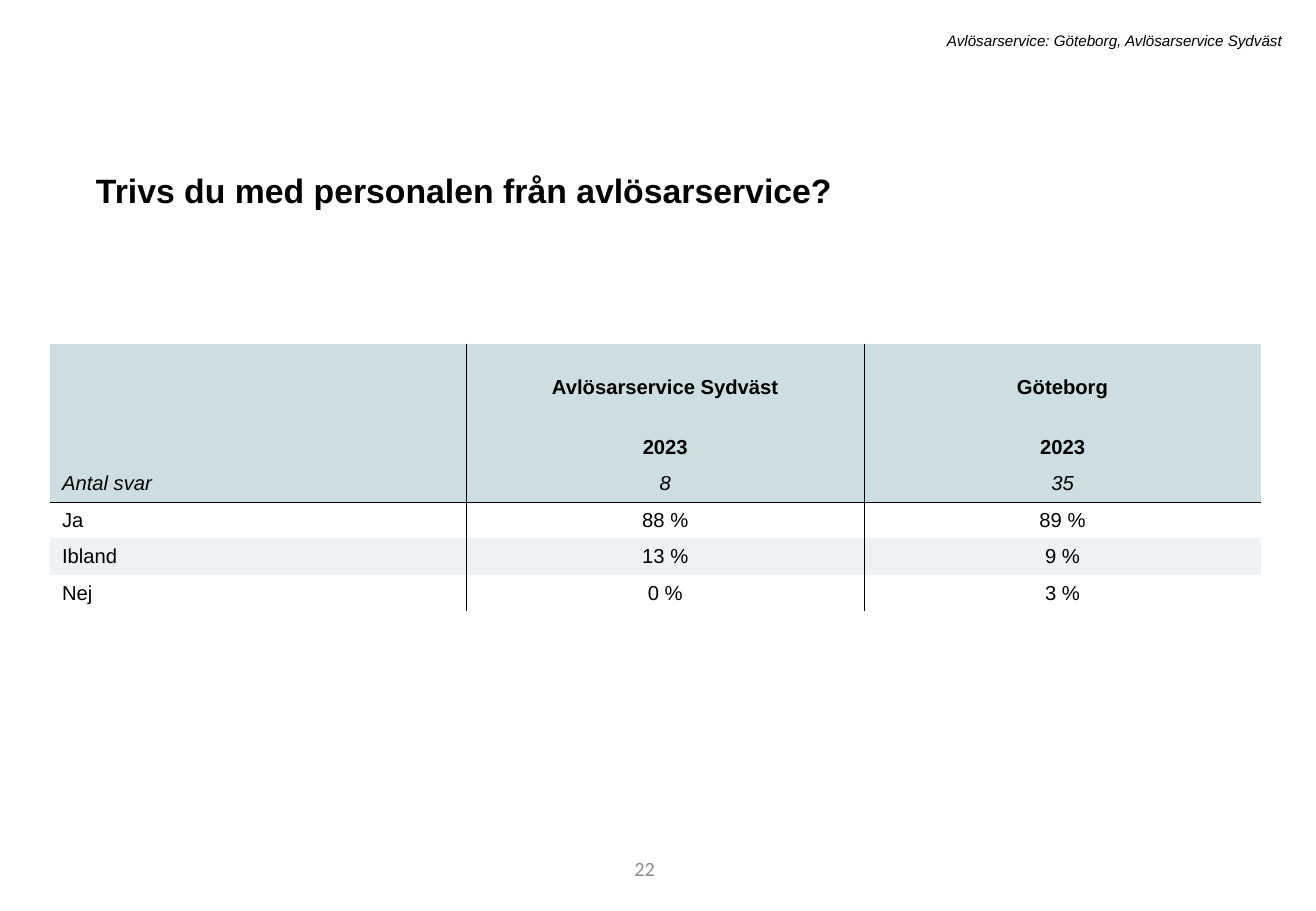
import pptx
import pptx.util
import pptx.dml.color
import pptx.enum.text
import pptx.oxml
import pptx.oxml.ns

Pt = pptx.util.Pt
Align = pptx.enum.text.PP_ALIGN
Anchor = pptx.enum.text.MSO_ANCHOR
AutoSize = pptx.enum.text.MSO_AUTO_SIZE

QUESTION = "Trivs du med personalen från avlösarservice?"
UNIT = "Avlösarservice: Göteborg, Avlösarservice Sydväst"
PAGE = "22"
ANSWERS = [
    ("", "Avlösarservice Sydväst", "Göteborg"),
    ("", "2023", "2023"),
    ("Antal svar", "8", "35"),
    ("Ja", "88 %", "89 %"),
    ("Ibland", "13 %", "9 %"),
    ("Nej", "0 %", "3 %"),
]
COLUMN_WIDTHS = [247, 235.5, 235.5]
ROW_HEIGHTS = [36, 36, 21.6, 21.6, 21.6, 21.6]
HEADING_ROWS = 2
COUNT_ROW = 2
BLACK, GREY, HEADER_FILL, BAND_FILL = "000000", "8C8C8C", "CCDEE1", "EDF3F4"


def rgb(color):
    return pptx.dml.color.RGBColor.from_string(color)


def format_text(frame, text, size, color=BLACK, font="Arial", bold=False,
                italic=False, align=Align.LEFT):
    frame.text = text
    paragraph = frame.paragraphs[0]
    paragraph.alignment = align
    paragraph.font.name = font
    paragraph.font.size = Pt(size)
    paragraph.font.bold = bold
    paragraph.font.italic = italic
    paragraph.font.color.rgb = rgb(color)
    return paragraph


def add_label(slide, box, text, size, **style):
    frame = slide.shapes.add_textbox(*map(Pt, box)).text_frame
    frame.word_wrap = True
    format_text(frame, text, size, align=Align.RIGHT, **style)
    return frame


def set_borders(cell, drawn_sides):
    properties = cell._tc.get_or_add_tcPr()
    namespace = pptx.oxml.ns.nsdecls("a")
    for side in "LRTB":
        paint = "<a:noFill/>"
        if side in drawn_sides:
            paint = f'<a:solidFill><a:srgbClr val="{BLACK}"/></a:solidFill>'
        properties.append(pptx.oxml.parse_xml(
            f'<a:ln{side} {namespace} w="{Pt(0.25)}">{paint}</a:ln{side}>'))


def format_cell(cell, text, row, column):
    heading = row < HEADING_ROWS
    format_text(cell.text_frame, text, 12, bold=heading, italic=row == COUNT_ROW,
                align=Align.CENTER if column else Align.LEFT)
    cell.vertical_anchor = Anchor.BOTTOM if heading else Anchor.MIDDLE
    sides = {
        "L": column > 0,
        "R": column < len(COLUMN_WIDTHS) - 1,
        "T": row == COUNT_ROW + 1,
        "B": row == COUNT_ROW,
    }
    set_borders(cell, [side for side, drawn in sides.items() if drawn])
    if row <= COUNT_ROW or row % 2 == 0:
        cell.fill.solid()
        cell.fill.fore_color.rgb = rgb(HEADER_FILL if row <= COUNT_ROW else BAND_FILL)
    else:
        cell.fill.background()


def add_answers(slide):
    answers = slide.shapes.add_table(
        len(ANSWERS), len(COLUMN_WIDTHS), Pt(29.6), Pt(203.8),
        Pt(sum(COLUMN_WIDTHS)), Pt(sum(ROW_HEIGHTS))).table
    answers.first_row = False
    answers.horz_banding = False
    for column, width in zip(answers.columns, COLUMN_WIDTHS):
        column.width = Pt(width)
    for row, height in zip(answers.rows, ROW_HEIGHTS):
        row.height = Pt(height)
    for row, texts in enumerate(ANSWERS):
        for column, text in enumerate(texts):
            format_cell(answers.cell(row, column), text, row, column)


def main():
    presentation = pptx.Presentation()
    presentation.slide_width, presentation.slide_height = Pt(780), Pt(540)
    slide = presentation.slides.add_slide(presentation.slide_layouts[5])

    question = slide.shapes.title
    question.left, question.top = Pt(49.7), Pt(92.2)
    question.width, question.height = Pt(676.8), Pt(33.8)
    paragraph = format_text(question.text_frame, QUESTION, 20, bold=True)
    paragraph.line_spacing = 1.2
    paragraph.space_before = Pt(10)
    question.text_frame.vertical_anchor = Anchor.TOP
    question.text_frame.auto_size = AutoSize.SHAPE_TO_FIT_TEXT

    add_label(slide, (128.9, 15.1, 637.9, 18), UNIT, 9, italic=True)
    page = add_label(slide, (219.6, 500.4, 175.7, 28.8), PAGE, 12,
                     color=GREY, font="Calibri")
    page.vertical_anchor = Anchor.MIDDLE
    add_answers(slide)
    presentation.save("out.pptx")


if __name__ == "__main__":
    main()
